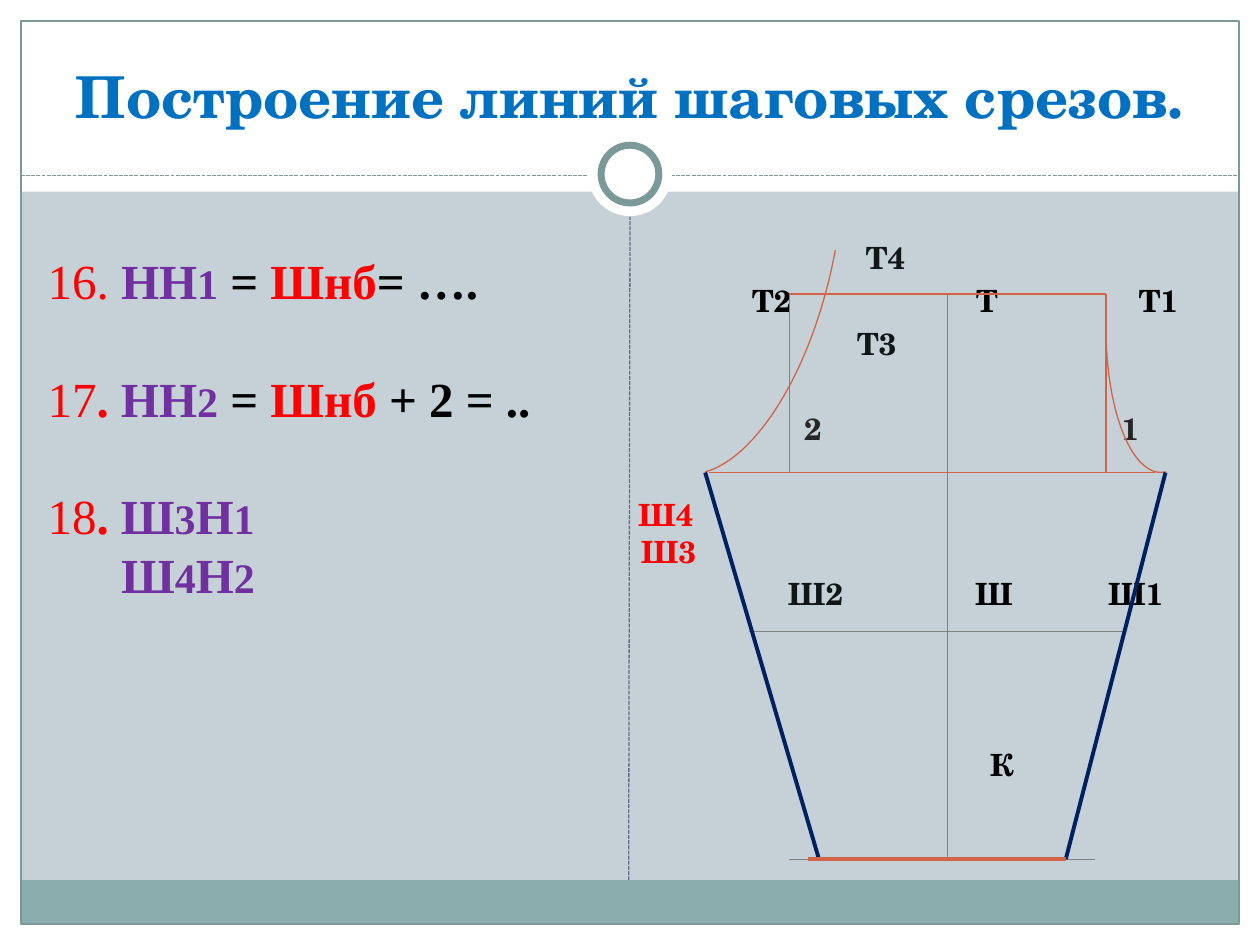
from dataclasses import dataclass

from lxml import etree
from pptx import Presentation
from pptx.dml.color import RGBColor
from pptx.enum.dml import MSO_LINE
from pptx.enum.shapes import MSO_CONNECTOR, MSO_SHAPE
from pptx.enum.text import MSO_ANCHOR, MSO_AUTO_SIZE, PP_ALIGN
from pptx.oxml.ns import qn
from pptx.util import Pt

RECT, OVAL, ARC = MSO_SHAPE.RECTANGLE, MSO_SHAPE.OVAL, MSO_SHAPE.ARC
STRAIGHT, DASH = MSO_CONNECTOR.STRAIGHT, MSO_LINE.SQUARE_DOT
BOTTOM, MIDDLE, TOP = MSO_ANCHOR.BOTTOM, MSO_ANCHOR.MIDDLE, MSO_ANCHOR.TOP
CENTER, LEFT = PP_ALIGN.CENTER, PP_ALIGN.LEFT
NO_FIT = MSO_AUTO_SIZE.NONE


@dataclass(frozen=True)
class Theme:
    heading_font: str = "TeX Gyre Schola"
    body_font: str = "Times New Roman"
    title_size: float = 33
    formula_size: float = 28
    index_size: float = 24
    label_size: float = 17.5
    leading: float = 33.6
    hanging: float = 42
    background: str = "C5D1D7"
    white: str = "FFFFFF"
    band: str = "8CADAE"
    frame: str = "7C999A"
    divider: str = "646B86"
    title: str = "0070C0"
    red: str = "FF0000"
    purple: str = "7030A0"
    black: str = "000000"
    dark: str = "111618"
    digit: str = "262626"
    draft: str = "D16349"
    axis: str = "808080"
    seam: str = "002060"


T = Theme()

FORMULAS = [
    [[("16. ", T.red, False), ("НН", T.purple), ("1", T.purple, True, T.index_size),
      (" = ", T.black), ("Шнб", T.red), ("= ….", T.black)]],
    [[("17", T.red, False), (". ", T.red), ("НН", T.purple),
      ("2", T.purple, True, T.index_size), (" = ", T.black), ("Шнб", T.red),
      (" + 2 = ..", T.black)]],
    [[("18", T.red, False), (". ", T.red), ("Ш", T.purple),
      ("3", T.purple, True, T.index_size), ("Н", T.purple),
      ("1", T.purple, True, T.index_size)],
     [("Ш", T.purple), ("4", T.purple, True, T.index_size), ("Н", T.purple),
      ("2", T.purple, True, T.index_size)]],
]

LABELS = [
    ("Т4", 506, 147, T.dark), ("Т2", 441, 171.5, T.black),
    ("Т", 564, 171.5, T.black), ("Т1", 662, 171.5, T.black),
    ("Т3", 501, 196, T.dark), ("2", 464.5, 245, T.digit),
    ("1", 646, 245, T.digit), ("Ш4", 380.5, 294, T.red),
    ("Ш3", 382, 315, T.red), ("Ш2", 466, 339, T.dark),
    ("Ш", 568, 339, T.black), ("Ш1", 649, 339, T.black),
    ("К", 572.5, 437, T.black),
]

BACK, CENTRE, FRONT = 451, 541.5, 632
WAIST, CROTCH, KNEE, HEM = 168, 270, 360.75, 491


def set_all(obj, values):
    for name, value in values.items():
        setattr(obj, name, value)


def place(sp, x, y, w, h):
    set_all(sp, {"left": Pt(x), "top": Pt(y), "width": Pt(w), "height": Pt(h)})


def style_line(sp, color, width):
    sp.line.color.rgb = RGBColor.from_string(color)
    sp.line.width = Pt(width)


def add_shape(s, kind, box, fill=None, line=None, width=0.75):
    sp = s.shapes.add_shape(kind, *map(Pt, box))
    sp.shadow.inherit = False
    if fill:
        sp.fill.solid()
        sp.fill.fore_color.rgb = RGBColor.from_string(fill)
    else:
        sp.fill.background()
    if line:
        style_line(sp, line, width)
    else:
        sp.line.fill.background()
    return sp


def add_arc(s, box, start, end, rotation=0):
    sp = add_shape(s, ARC, box, line=T.draft)
    for i, degrees in enumerate((start, end)):
        sp.adjustments[i] = degrees * 0.6
    sp.rotation = rotation


def add_line(s, x1, y1, x2, y2, color=T.draft, width=0.75, dash=None):
    cn = s.shapes.add_connector(STRAIGHT, Pt(x1), Pt(y1), Pt(x2), Pt(y2))
    style_line(cn, color, width)
    if dash:
        cn.line.dash_style = dash
    etree.SubElement(cn._element.spPr, qn("a:effectLst"))


def add_run(p, text, color, bold=True, size=T.formula_size, font=T.body_font):
    r = p.add_run()
    r.text = text
    set_all(r.font, {"name": font, "size": Pt(size), "bold": bold})
    r.font.color.rgb = RGBColor.from_string(color)


def add_frame(s):
    for box in ((0, 528, 720, 12), (0, 0, 720, 109.5),
                (0, 0, 12, 540), (708, 0, 12, 540)):
        add_shape(s, RECT, box, T.white)
    add_shape(s, RECT, (12, 503, 696, 25), T.band)
    add_shape(s, RECT, (12, 12, 696, 516), line=T.frame)
    add_line(s, 12, 100.5, 708, 100.5, T.frame, dash=DASH)
    add_shape(s, OVAL, (336, 75.5, 48, 48), T.white)
    add_shape(s, OVAL, (343.5, 83, 33, 33), T.white, T.frame, 4)
    add_line(s, 359.25, 503, 360, 124, T.divider, dash=DASH)


def add_title(s, text):
    sp = s.shapes.title
    s.shapes._spTree.append(sp._element)
    place(sp, 24, 18, 672, 60)
    tf = sp.text_frame
    set_all(tf, {"vertical_anchor": BOTTOM, "auto_size": NO_FIT})
    p = tf.paragraphs[0]
    p.alignment = CENTER
    add_run(p, text, T.title, size=T.title_size, font=T.heading_font)


def add_formulas(s, items):
    sp = s.placeholders[1]
    s.shapes._spTree.append(sp._element)
    place(sp, 20, 139.75, 329, 245)
    tf = sp.text_frame
    set_all(tf, {"vertical_anchor": TOP, "auto_size": NO_FIT})
    for i, lines in enumerate(items):
        p = tf.add_paragraph() if i else tf.paragraphs[0]
        set_all(p, {"alignment": LEFT, "line_spacing": Pt(T.leading),
                    "space_before": Pt(T.leading if i else 0)})
        pPr = p._p.get_or_add_pPr()
        pPr.set("marL", str(Pt(T.hanging)))
        pPr.set("indent", str(-Pt(T.hanging)))
        etree.SubElement(pPr, qn("a:buNone"))
        for j, runs in enumerate(lines):
            if j:
                p.add_line_break()
            for run in runs:
                add_run(p, *run)


def add_label(s, text, x, y, color):
    w, h = 40, 22
    sp = s.shapes.add_textbox(Pt(x - w / 2), Pt(y - h / 2), Pt(w), Pt(h))
    tf = sp.text_frame
    set_all(tf, {"margin_left": 0, "margin_right": 0, "margin_top": 0,
                 "margin_bottom": 0, "word_wrap": True, "vertical_anchor": MIDDLE})
    p = tf.paragraphs[0]
    p.alignment = CENTER
    add_run(p, text, color, size=T.label_size, font=T.heading_font)


def add_pattern(s):
    add_line(s, CENTRE, WAIST, CENTRE, HEM, T.axis)
    add_line(s, 428, KNEE, 643.5, KNEE, T.axis)
    add_line(s, BACK, HEM, 626, HEM, T.axis)
    for y, stops in ((WAIST, (BACK, CENTRE, FRONT)),
                     (CROTCH, (405, BACK, CENTRE, FRONT, 660))):
        for x1, x2 in zip(stops, stops[1:]):
            add_line(s, x1, y, x2, y)
    for x in (BACK, FRONT):
        add_line(s, x, CROTCH, x, WAIST)
    add_arc(s, (632, 106, 62.5, 164), 88, 185.5)
    add_arc(s, (286, 83, 263.5, 117.25), 258.7, 354, 102.6)
    for top, bottom in ((403, 468), (666, 609)):
        add_line(s, top, CROTCH, bottom, HEM, T.seam, 2.25)
    for x in (609, 462):
        add_line(s, CENTRE, HEM, x, HEM, width=2.25)


def main():
    prs = Presentation()
    set_all(prs, {"slide_width": Pt(720), "slide_height": Pt(540)})
    s = prs.slides.add_slide(prs.slide_layouts[1])
    fill = s.background.fill
    fill.solid()
    fill.fore_color.rgb = RGBColor.from_string(T.background)
    add_frame(s)
    add_title(s, "Построение линий шаговых срезов.")
    add_formulas(s, FORMULAS)
    for label in LABELS:
        add_label(s, *label)
    add_pattern(s)
    prs.save("out.pptx")


if __name__ == "__main__":
    main()
